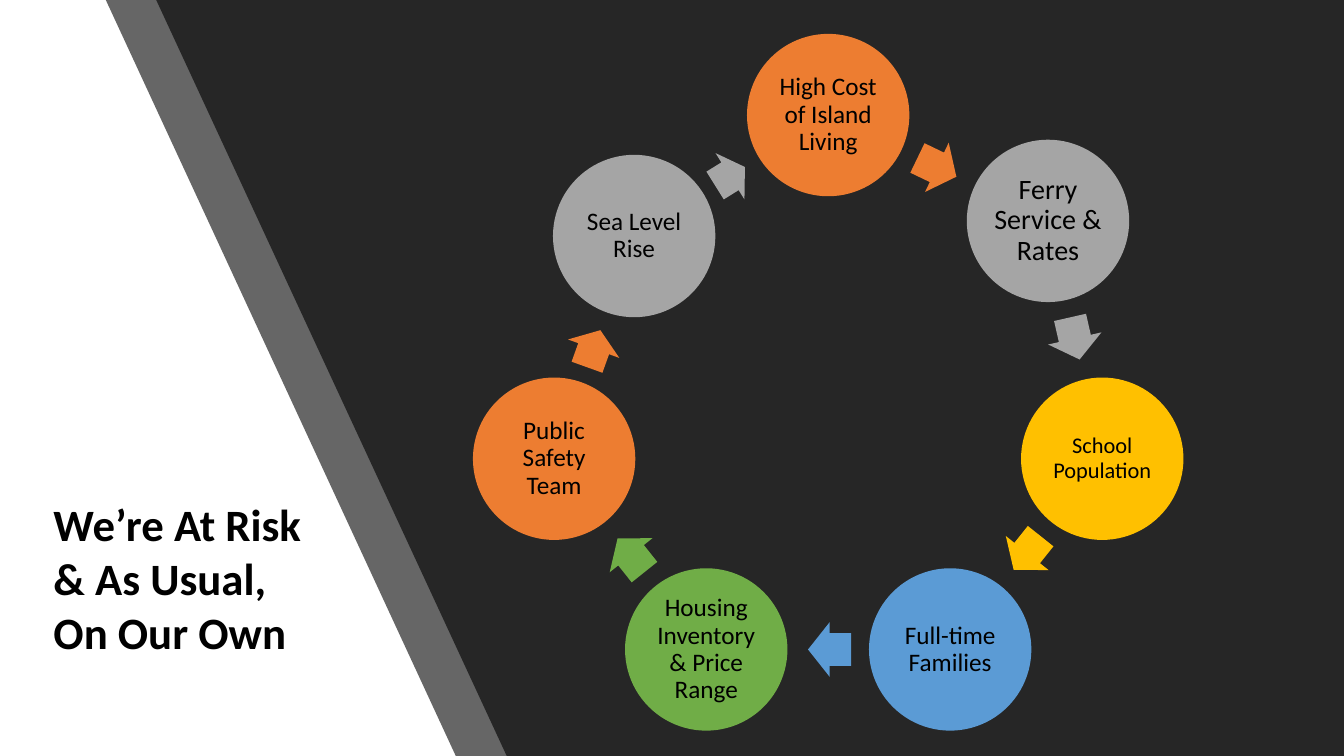
"""Build the island risk cycle slide."""
from math import atan2, cos, degrees, hypot, pi, sin

from lxml import etree
from pptx import Presentation
from pptx.dml.color import RGBColor
from pptx.enum.shapes import MSO_SHAPE
from pptx.enum.text import MSO_ANCHOR, MSO_AUTO_SIZE, PP_ALIGN
from pptx.oxml.ns import qn
from pptx.util import Pt

RECTANGLE = MSO_SHAPE.RECTANGLE
OVAL = MSO_SHAPE.OVAL
RIGHT_ARROW = MSO_SHAPE.RIGHT_ARROW
TOP = MSO_ANCHOR.TOP
MIDDLE = MSO_ANCHOR.MIDDLE
CENTER = PP_ALIGN.CENTER
LEFT = PP_ALIGN.LEFT
FIT_SHAPE = MSO_AUTO_SIZE.SHAPE_TO_FIT_TEXT

FONT = "Calibri"
BLACK, WHITE, DARK = "000000", "FFFFFF", "262626"
ORANGE, GRAY, GOLD, BLUE, GREEN = "ED7D31", "A5A5A5", "FFC000", "5B9BD5", "70AD47"
WIDTH, HEIGHT = 960, 540
RING_X, RING_Y, RING_RADIUS = 591.6, 283, 200.8
DIAMETER = 116
ARROW_HEIGHT = 39
ARROW_SHARE = 0.53

RISKS = [
    ("High Cost of Island Living", ORANGE, 18, (0, 0)),
    ("Ferry Service & Rates", GRAY, 20, (0, 0)),
    ("School Population", GOLD, 16, (0, 0)),
    ("Full-time Families", BLUE, 18, (0, 0)),
    ("Housing Inventory & Price Range", GREEN, 18, (0, 0)),
    ("Public Safety Team", ORANGE, 18, (0, 0)),
    ("Sea Level Rise", GRAY, 18, (18.4, 10.8)),
]


def paint(fill, color):
    """Give a fill a solid hex colour."""
    fill.solid()
    fill.fore_color.rgb = RGBColor.from_string(color)


def style_shape(shape, color):
    """Give a shape a plain fill with no line or shadow."""
    paint(shape.fill, color)
    shape.line.fill.background()
    shape.shadow.inherit = False


def format_text(text_frame, size, align, bold=False):
    """Set font, size, weight and alignment of all the text."""
    for paragraph in text_frame.paragraphs:
        paragraph.alignment = align
        for run in paragraph.runs:
            run.font.name = FONT
            run.font.size = Pt(size)
            run.font.bold = bold
            run.font.color.rgb = RGBColor.from_string(BLACK)


def add_panel(slide, top_x, bottom_x, opacity=100):
    """Add a dark panel with a slanted left edge."""
    builder = slide.shapes.build_freeform(Pt(WIDTH), Pt(HEIGHT))
    corners = [(bottom_x, HEIGHT), (top_x, 0), (WIDTH, 0)]
    builder.add_line_segments([(Pt(x), Pt(y)) for x, y in corners])
    panel = builder.convert_to_shape()
    style_shape(panel, DARK)
    if opacity < 100:
        color = panel.fill._xPr.find(".//" + qn("a:srgbClr"))
        etree.SubElement(color, qn("a:alpha"), val=str(opacity * 1000))


def add_circle(slide, center, text, color, size):
    """Add one labelled circle of the ring."""
    x, y = center
    circle = slide.shapes.add_shape(
        OVAL, Pt(x - DIAMETER / 2), Pt(y - DIAMETER / 2), Pt(DIAMETER), Pt(DIAMETER))
    style_shape(circle, color)
    text_frame = circle.text_frame
    text_frame.text = text
    text_frame.word_wrap = True
    text_frame.vertical_anchor = MIDDLE
    text_frame.margin_left = text_frame.margin_right = Pt(2)
    text_frame.margin_top = text_frame.margin_bottom = Pt(2)
    text_frame.paragraphs[0].line_spacing = 0.9
    format_text(text_frame, size, CENTER)


def add_arrow(slide, start, end, color):
    """Add a block arrow in the gap between two circles."""
    step_x, step_y = end[0] - start[0], end[1] - start[1]
    distance = hypot(step_x, step_y)
    length = (distance - DIAMETER) * ARROW_SHARE
    share = 0.5 - 1 / distance
    x, y = start[0] + step_x * share, start[1] + step_y * share
    arrow = slide.shapes.add_shape(
        RIGHT_ARROW, Pt(x - length / 2), Pt(y - ARROW_HEIGHT / 2),
        Pt(length), Pt(ARROW_HEIGHT))
    arrow.adjustments[0] = 0.6
    arrow.adjustments[1] = 0.5
    arrow.rotation = degrees(atan2(step_y, step_x)) % 360
    style_shape(arrow, color)


def add_cycle(slide):
    """Add the ring of risks with an arrow from each to the next."""
    centers = []
    for index, (_, _, _, (shift_x, shift_y)) in enumerate(RISKS):
        angle = 2 * pi * index / len(RISKS)
        centers.append((RING_X + RING_RADIUS * sin(angle) + shift_x,
                        RING_Y - RING_RADIUS * cos(angle) + shift_y))
    for index, (text, color, size, _) in enumerate(RISKS):
        add_circle(slide, centers[index], text, color, size)
        add_arrow(slide, centers[index], centers[(index + 1) % len(RISKS)], color)


def place_title(slide):
    """Fill the title placeholder and bring it to the front."""
    title = slide.shapes.title
    title.left, title.top, title.width, title.height = Pt(31), Pt(351.5), Pt(214.5), Pt(124)
    text_frame = title.text_frame
    text_frame.text = "We’re At Risk & As Usual,\nOn Our Own"
    text_frame.word_wrap = True
    text_frame.auto_size = FIT_SHAPE
    text_frame.vertical_anchor = TOP
    format_text(text_frame, 32, LEFT, bold=True)
    slide.shapes._spTree.append(title._element)


def main():
    """Build and save the presentation."""
    presentation = Presentation()
    presentation.slide_width, presentation.slide_height = Pt(WIDTH), Pt(HEIGHT)
    slide = presentation.slides.add_slide(presentation.slide_layouts[5])
    paint(slide.background.fill, BLACK)
    backdrop = slide.shapes.add_shape(RECTANGLE, 0, 0, Pt(WIDTH), Pt(HEIGHT))
    style_shape(backdrop, WHITE)
    add_panel(slide, 75.6, 325.6, opacity=70)
    add_panel(slide, 111.6, 362)
    add_cycle(slide)
    place_title(slide)
    presentation.save("out.pptx")


if __name__ == "__main__":
    main()
